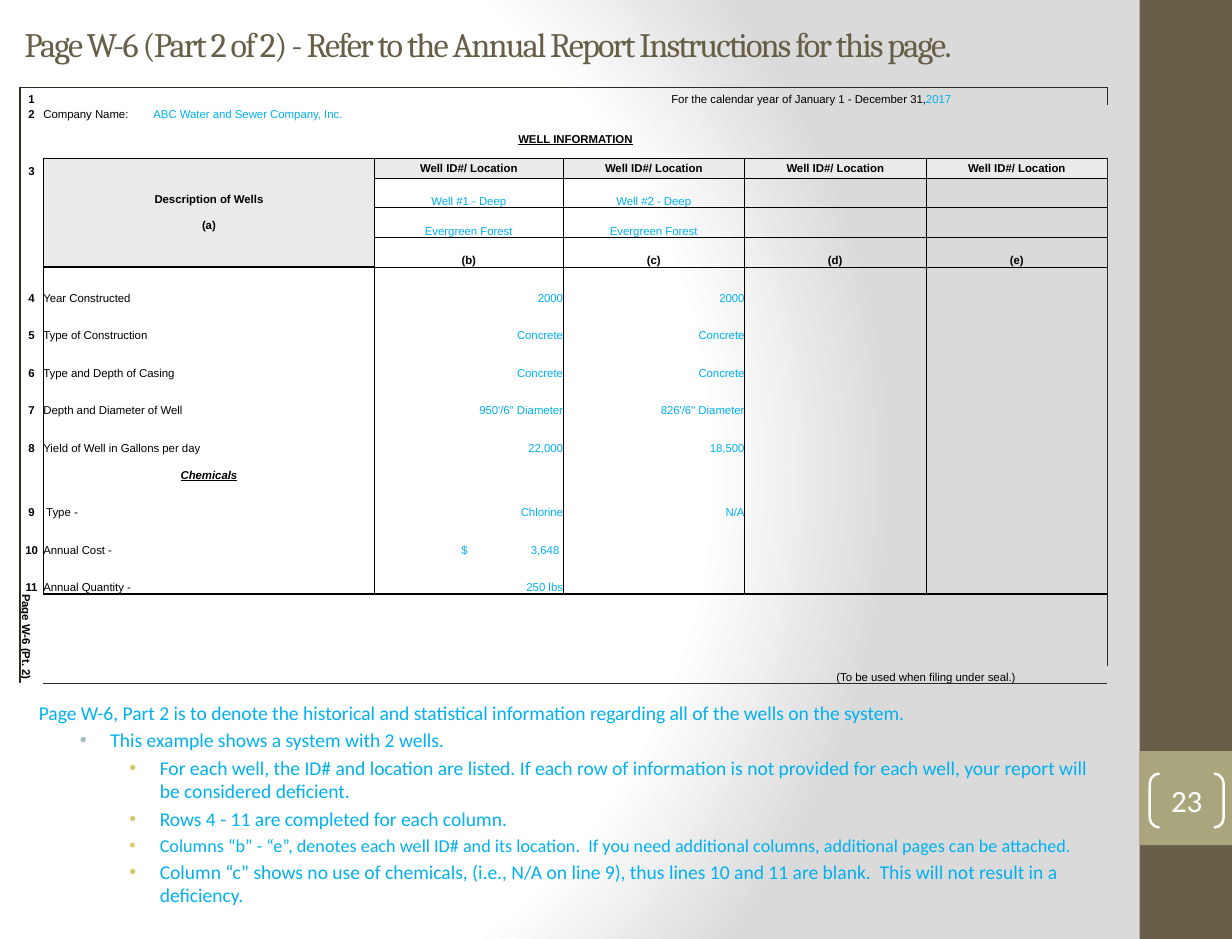
from collections import defaultdict

from pptx import Presentation
from pptx import util as u
from pptx.dml.color import RGBColor
from pptx.enum import shapes, text
from pptx.oxml import parse_xml
from pptx.oxml.ns import nsdecls, qn

BLACK = RGBColor(0x00, 0x00, 0x00)
WHITE = RGBColor(0xFF, 0xFF, 0xFF)
SILVER = RGBColor(0xDA, 0xDA, 0xDA)
HEADER = RGBColor(0xEA, 0xEA, 0xEA)
FRAME = RGBColor(0x2F, 0x2B, 0x20)
BROWN = RGBColor(0x67, 0x5E, 0x47)
OLIVE = RGBColor(0xA9, 0xA5, 0x7C)
CYAN = RGBColor(0x00, 0xB0, 0xF0)
TEAL = RGBColor(0x9C, 0xBE, 0xBD)
YELLOW = RGBColor(0xD2, 0xCB, 0x6C)

LEFT, CENTER, RIGHT = text.PP_ALIGN.LEFT, text.PP_ALIGN.CENTER, text.PP_ALIGN.RIGHT
MIDDLE, BOTTOM = text.MSO_ANCHOR.MIDDLE, text.MSO_ANCHOR.BOTTOM
FLUSH = dict(margin_left=0, margin_right=0, margin_top=0, margin_bottom=0)
INSET = dict(margin_left=u.Cm(0.28), margin_right=u.Cm(0.28),
             margin_top=u.Cm(0.13), margin_bottom=u.Cm(0.13), word_wrap=True)
NO_STYLE = "{2D5ABB26-0587-4C30-8999-92F81FD0307C}"

COLUMNS = [0.51, 2.39, 4.8, 4.09] + [3.94] * 3
ROWS = ([0.38, 0.33, 0.81, 0.43] + [0.64] * 3 + [0.81] * 5 + [0.58]
        + [0.81] * 3 + [0.48, 0.36, 0.33, 0.38, 0.38])
WELLS = [("Well #1 - Deep", "Evergreen Forest", "(b)"),
         ("Well #2 - Deep", "Evergreen Forest", "(c)"),
         ("", "", "(d)"), ("", "", "(e)")]
ENTRIES = {
    7: ("4", "Year Constructed", "2000", "2000"),
    8: ("5", "Type of Construction", "Concrete", "Concrete"),
    9: ("6", "Type and Depth of Casing", "Concrete", "Concrete"),
    10: ("7", "Depth and Diameter of Well", "950'/6\" Diameter", "826'/6\" Diameter"),
    11: ("8", "Yield of Well in Gallons per day", "22,000", "18,500"),
    13: ("9", " Type -", "Chlorine", "N/A"),
    14: ("10", "Annual Cost -", "\t$\t3,648", ""),
    15: ("11", "Annual Quantity -", "250 lbs", ""),
}
NOTES = [
    (0, 12, "Page W-6, Part 2 is to denote the historical and statistical information "
            "regarding all of the wells on the system."),
    (1, 12, "This example shows a system with 2 wells."),
    (2, 12, "For each well, the ID# and location are listed. If each row of information is "
            "not provided for each well, your report will be considered deficient."),
    (2, 12, "Rows 4 - 11 are completed for each column."),
    (2, 11.1, "Columns “b” - “e”, denotes each well ID# and its location.  If you need "
              "additional columns, additional pages can be attached."),
    (2, 12, "Column “c” shows no use of chemicals, (i.e., N/A on line 9), thus lines 10 and "
            "11 are blank.  This will not result in a deficiency."),
]
LEVELS = [(0.33, 0, None), (1.88, -0.66, TEAL), (2.95, -0.66, YELLOW)]


def apply(target, values):
    for name, value in values.items():
        setattr(target, name, value)


def add_run(paragraph, words, color, **font):
    run = paragraph.add_run()
    run.text = words
    apply(run.font, font)
    run.font.color.rgb = color
    return run


def paint_background(slide):
    slide.background.fill.gradient()
    old = slide.element.find(".//" + qn("a:gradFill"))
    stops = "".join(f'<a:gs pos="{at}"><a:srgbClr val="{color}"/></a:gs>'
                    for at, color in ((0, WHITE), (75000, WHITE), (100000, SILVER)))
    old.getparent().replace(old, parse_xml(
        f'<a:gradFill {nsdecls("a")} rotWithShape="1"><a:gsLst>{stops}</a:gsLst>'
        '<a:path path="circle"><a:fillToRect l="20000" t="50000" r="100000" b="50000"/>'
        '</a:path></a:gradFill>'))


def add_sidebar(slide, left, top, width, height):
    for offset, depth, color in ((0, height, BROWN), (0.8 * height, 0.1 * height, OLIVE)):
        band = slide.shapes.add_shape(shapes.MSO_SHAPE.RECTANGLE, u.Cm(left),
                                      u.Cm(top + offset), u.Cm(width), u.Cm(depth))
        band.shadow.inherit = False
        band.fill.solid()
        band.fill.fore_color.rgb = color
        band.line.fill.background()
    number = slide.shapes.add_shape(shapes.MSO_SHAPE.DOUBLE_BRACKET, u.Cm(left + 0.22),
                                    u.Cm(top + 16.74), u.Cm(1.6), u.Cm(1.17))
    number.shadow.inherit = False
    number.adjustments[0] = 0.18
    number.fill.background()
    number.line.color.rgb = WHITE
    number.line.width = u.Pt(1.5)
    apply(number.text_frame, dict(FLUSH, vertical_anchor=MIDDLE))
    paragraph = number.text_frame.paragraphs[0]
    paragraph.alignment = CENTER
    add_run(paragraph, "23", WHITE, name="Calibri", size=u.Pt(19))


def add_title(slide, *box):
    frame = slide.shapes.add_textbox(*map(u.Cm, box)).text_frame
    apply(frame, dict(INSET, vertical_anchor=MIDDLE))
    paragraph = frame.paragraphs[0]
    paragraph._p.get_or_add_pPr().set("marL", str(u.Cm(0.25)))
    title = add_run(
        paragraph, "Page W-6 (Part 2 of 2) - Refer to the Annual Report Instructions for this page.",
        BROWN, name="Cambria", size=u.Pt(21))
    title._r.get_or_add_rPr().set("spc", "-110")


def write(cell, words, align=CENTER, color=BLACK, anchor=BOTTOM, **font):
    cell.vertical_anchor = anchor
    for index, line in enumerate(words.split("\n")):
        frame = cell.text_frame
        paragraph = frame.add_paragraph() if index else frame.paragraphs[0]
        paragraph.alignment = align
        paragraph.space_before = u.Pt(8 if index else 0)
        add_run(paragraph, line, color, **dict(dict(name="Arial", size=u.Pt(7)), **font))


def box_edges(edges, top, left, bottom, right, color, width, sides="LRTB"):
    for row in range(top, bottom + 1):
        for column in range(left, right + 1):
            touching = dict(L=column == left, R=column == right, T=row == top, B=row == bottom)
            for side in sides:
                if touching[side]:
                    edges[row, column][side] = (color, width)


def draw_edges(table):
    edges = defaultdict(dict)
    for column in range(3, 7):
        box_edges(edges, 3, column, 15, column, BLACK, 0.5)
        for row in range(3, 7):
            box_edges(edges, row, column, row, column, BLACK, 0.5)
    box_edges(edges, 3, 1, 6, 6, BLACK, 0.5, "B")
    box_edges(edges, 3, 1, 15, 6, BLACK, 1, "LTB")
    box_edges(edges, 0, 0, 20, 6, FRAME, 1)
    for (row, column), sides in edges.items():
        properties = table.cell(row, column)._tc.get_or_add_tcPr()
        for index, side in enumerate(s for s in "LRTB" if s in sides):
            color, width = sides[side]
            properties.insert(index, parse_xml(
                f'<a:ln{side} {nsdecls("a")} w="{u.Pt(width)}"><a:solidFill>'
                f'<a:srgbClr val="{color}"/></a:solidFill></a:ln{side}>'))


def add_well_table(slide, left, top, width, height):
    frame = slide.shapes.add_table(len(ROWS), len(COLUMNS), *map(u.Cm, (left, top, width, height)))
    table = frame.table
    apply(table, dict(first_row=False, horz_banding=False))
    table._tbl.tblPr.find(qn("a:tableStyleId")).text = NO_STYLE
    for column, share in zip(table.columns, COLUMNS):
        column.width = u.Cm(width * share / sum(COLUMNS))
    for row, share in zip(table.rows, ROWS):
        row.height = u.Cm(height * share / sum(ROWS))
    for cell in table.iter_cells():
        apply(cell, FLUSH)
        cell.fill.background()
        cell.text_frame.paragraphs[0]._p.get_or_add_endParaRPr().set("sz", "700")

    spans = [(0, 2, 0, 5), (1, 2, 1, 6), (2, 1, 2, 6), (3, 1, 6, 2), (16, 0, 20, 0), (20, 5, 20, 6)]
    spans += [(row, 1, row, 2) for row in range(7, 21)]
    for first_row, first, last_row, last in spans:
        table.cell(first_row, first).merge(table.cell(last_row, last))

    cell = table.cell
    for row, line in ((0, "1"), (1, "2"), (3, "3")):
        write(cell(row, 0), line, bold=True)
    write(cell(0, 2), "For the calendar year of January 1 - December 31,", RIGHT)
    write(cell(0, 6), "2017", LEFT, CYAN)
    write(cell(1, 1), "Company Name:", LEFT)
    write(cell(1, 2), "ABC Water and Sewer Company, Inc.", LEFT, CYAN)
    write(cell(2, 1), "WELL INFORMATION", anchor=MIDDLE, bold=True, underline=True)
    write(cell(3, 1), "Description of Wells\n(a)", anchor=MIDDLE, bold=True)
    for column, (well, location, letter) in enumerate(WELLS, 3):
        write(cell(3, column), "Well ID#/ Location", anchor=MIDDLE, bold=True)
        if well:
            write(cell(4, column), well, color=CYAN)
            write(cell(5, column), location, color=CYAN)
        write(cell(6, column), letter, bold=True)
    for column in (1, 3, 4, 5, 6):
        cell(3, column).fill.solid()
        cell(3, column).fill.fore_color.rgb = HEADER
    for row, (line, label, *values) in ENTRIES.items():
        write(cell(row, 0), line, bold=True)
        write(cell(row, 1), label, LEFT)
        for column, value in enumerate(values, 3):
            if value:
                write(cell(row, column), value, LEFT if "\t" in value else RIGHT, CYAN)
    cost = cell(14, 3).text_frame.paragraphs[0]._p.get_or_add_pPr()
    cost.append(parse_xml(f'<a:tabLst {nsdecls("a")}><a:tab pos="{u.Cm(1.88)}" algn="l"/>'
                          f'<a:tab pos="{u.Cm(4)}" algn="r"/></a:tabLst>'))
    write(cell(12, 1), "Chemicals", bold=True, italic=True, underline=True)
    write(cell(16, 0), "Page W-6 (Pt. 2)", LEFT, anchor=MIDDLE, bold=True)
    cell(16, 0)._tc.get_or_add_tcPr().set("vert", "vert")
    write(cell(20, 5), "(To be used when filing under seal.)")
    draw_edges(table)


def add_notes_text(slide, *box):
    frame = slide.shapes.add_textbox(*map(u.Cm, box)).text_frame
    apply(frame, INSET)
    for index, (level, size, words) in enumerate(NOTES):
        paragraph = frame.add_paragraph() if index else frame.paragraphs[0]
        apply(paragraph, dict(level=level, space_before=u.Pt(2.4)))
        margin, indent, bullet = LEVELS[level]
        properties = paragraph._p.get_or_add_pPr()
        properties.set("marL", str(u.Cm(margin)))
        properties.set("indent", str(u.Cm(indent)))
        if bullet:
            properties.append(parse_xml(
                f'<a:buClr {nsdecls("a")}><a:srgbClr val="{bullet}"/></a:buClr>'))
            properties.append(parse_xml(f'<a:buFont {nsdecls("a")} typeface="Arial"/>'))
            properties.append(parse_xml(f'<a:buChar {nsdecls("a")} char="•"/>'))
        add_run(paragraph, words, CYAN, name="Calibri", size=u.Pt(size))


def main():
    deck = Presentation()
    apply(deck, dict(slide_width=u.Cm(26.67), slide_height=u.Cm(20.32)))
    slide = deck.slides.add_slide(deck.slide_layouts[6])
    paint_background(slide)
    add_sidebar(slide, 24.67, 0, 2, 20.32)
    add_title(slide, 0, 0, 24.76, 1.9)
    add_well_table(slide, 0.43, 1.9, 23.55, 12.9)
    add_notes_text(slide, 0.23, 15.04, 24, 4.44)
    deck.save("out.pptx")


if __name__ == "__main__":
    main()
